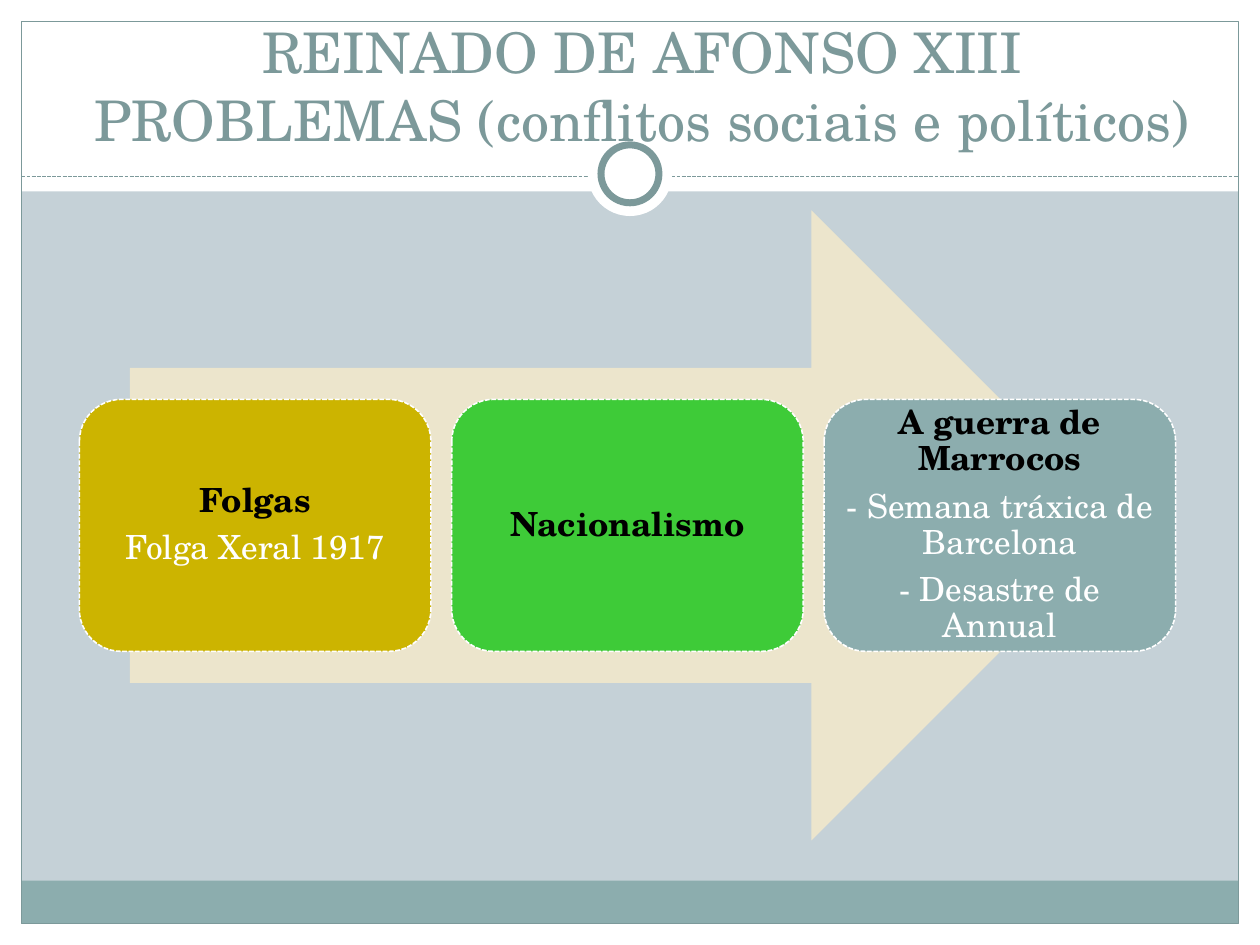
from pptx import Presentation
from pptx import util as u
from pptx.dml.color import RGBColor
from pptx.enum import dml, shapes, text
from pptx.oxml.ns import qn
from lxml import etree

FONT = "TeX Gyre Schola"
COLORS = {"bg": "C5D1D7", "white": "FFFFFF", "black": "000000", "band": "8CADAE",
          "accent": "7C999A", "arrow": "ECE5CC", "gold": "CCB400", "green": "3ECB38"}

# Content
TITLE = ["REINADO DE AFONSO XIII", "PROBLEMAS (conflitos sociais e políticos)"]
PROBLEMS = [
    ("gold", "Folgas", ["Folga Xeral 1917"]),
    ("green", "Nacionalismo", []),
    ("band", "A guerra de Marrocos", ["- Semana tráxica de Barcelona", "- Desastre de Annual"]),
]

# Layout, in inches
W, H, MARGIN = 10, 7.5, 0.17
RULE_Y = 1.4
CARD_X, CARD_Y, CARD_W, CARD_H, CARD_STEP = 0.63, 3.17, 2.79, 2, 2.955
KIND = shapes.MSO_SHAPE


def rgb(name):
    return RGBColor.from_string(COLORS[name])


def style_line(line, color, width, dashed=False):
    line.color.rgb = rgb(color)
    line.width = u.Pt(width)
    if dashed:
        line.dash_style = dml.MSO_LINE.SQUARE_DOT


def add_shape(s, kind, box, fill=None, line=None):
    sp = s.shapes.add_shape(kind, *map(u.Inches, box))
    sp.shadow.inherit = False
    if fill:
        sp.fill.solid()
        sp.fill.fore_color.rgb = rgb(fill)
    else:
        sp.fill.background()
    if line:
        style_line(sp.line, *line)
    else:
        sp.line.fill.background()
    return sp


def add_run(p, words, size, color, bold=False):
    r = p.add_run()
    r.text = words
    r.font.name, r.font.size, r.font.bold = FONT, u.Pt(size), bold
    r.font.color.rgb = rgb(color)


def add_frame(s):
    # White borders, then the footer band and the outline
    for box in [(0, H - MARGIN, W, MARGIN), (0, 0, W, 1.52),
                (0, 0, MARGIN, H), (W - MARGIN, 0, MARGIN, H)]:
        add_shape(s, KIND.RECTANGLE, box, "white")
    inner_w = W - 2 * MARGIN
    add_shape(s, KIND.RECTANGLE, (MARGIN, 6.99, inner_w, 0.34), "band")
    add_shape(s, KIND.RECTANGLE, (MARGIN, MARGIN, inner_w, H - 2 * MARGIN), None, ("accent", 0.75))

    # Dashed rule with a ring at its middle
    rule = s.shapes.add_connector(shapes.MSO_CONNECTOR.STRAIGHT, u.Inches(MARGIN), u.Inches(RULE_Y),
                                  u.Inches(W - MARGIN), u.Inches(RULE_Y))
    style_line(rule.line, "accent", 0.75, True)
    etree.SubElement(rule.element.spPr, qn("a:effectLst"))
    for size, line in [(0.67, None), (0.46, ("accent", 4))]:
        box = ((W - size) / 2, 1.38 - size / 2, size, size)
        add_shape(s, KIND.OVAL, box, "white", line)


def add_title(s):
    title = s.shapes.title
    s.shapes.element.append(title.element)  # in front of the frame
    title.left, title.top, title.width, title.height = map(u.Inches, (0.35, 0.01, 9.5, 1.25))
    tf = title.text_frame
    tf.auto_size = text.MSO_AUTO_SIZE.NONE
    tf.word_wrap = True
    tf.vertical_anchor = text.MSO_ANCHOR.BOTTOM
    p = tf.paragraphs[0]
    p.alignment = text.PP_ALIGN.CENTER
    for i, words in enumerate(TITLE):
        if i:
            p.add_line_break()
        add_run(p, words, 32, "accent")


def add_card(s, i, fill, heading, details):
    box = (CARD_X + i * CARD_STEP, CARD_Y, CARD_W, CARD_H)
    sp = add_shape(s, KIND.ROUNDED_RECTANGLE, box, fill, ("white", 0.9, True))
    tf = sp.text_frame
    tf.word_wrap = True
    tf.vertical_anchor = text.MSO_ANCHOR.MIDDLE
    tf.margin_left = tf.margin_right = tf.margin_top = tf.margin_bottom = u.Inches(0.08)
    for n, words in enumerate([heading] + details):
        p = tf.add_paragraph() if n else tf.paragraphs[0]
        p.alignment = text.PP_ALIGN.CENTER
        p.line_spacing = 0.9
        p.space_before = u.Pt(6.5 if n else 0)
        add_run(p, words, 19, "white" if n else "black", bold=not n)


def main():
    prs = Presentation()
    prs.slide_width, prs.slide_height = u.Inches(W), u.Inches(H)
    s = prs.slides.add_slide(prs.slide_layouts[5])
    s.background.fill.solid()
    s.background.fill.fore_color.rgb = rgb("bg")

    add_frame(s)
    add_title(s)

    # Arrow behind the row of cards
    add_shape(s, KIND.RIGHT_ARROW, (1.03, 1.67, 7.91, 5), "arrow")
    for i, problem in enumerate(PROBLEMS):
        add_card(s, i, *problem)

    prs.save("out.pptx")


if __name__ == "__main__":
    main()
